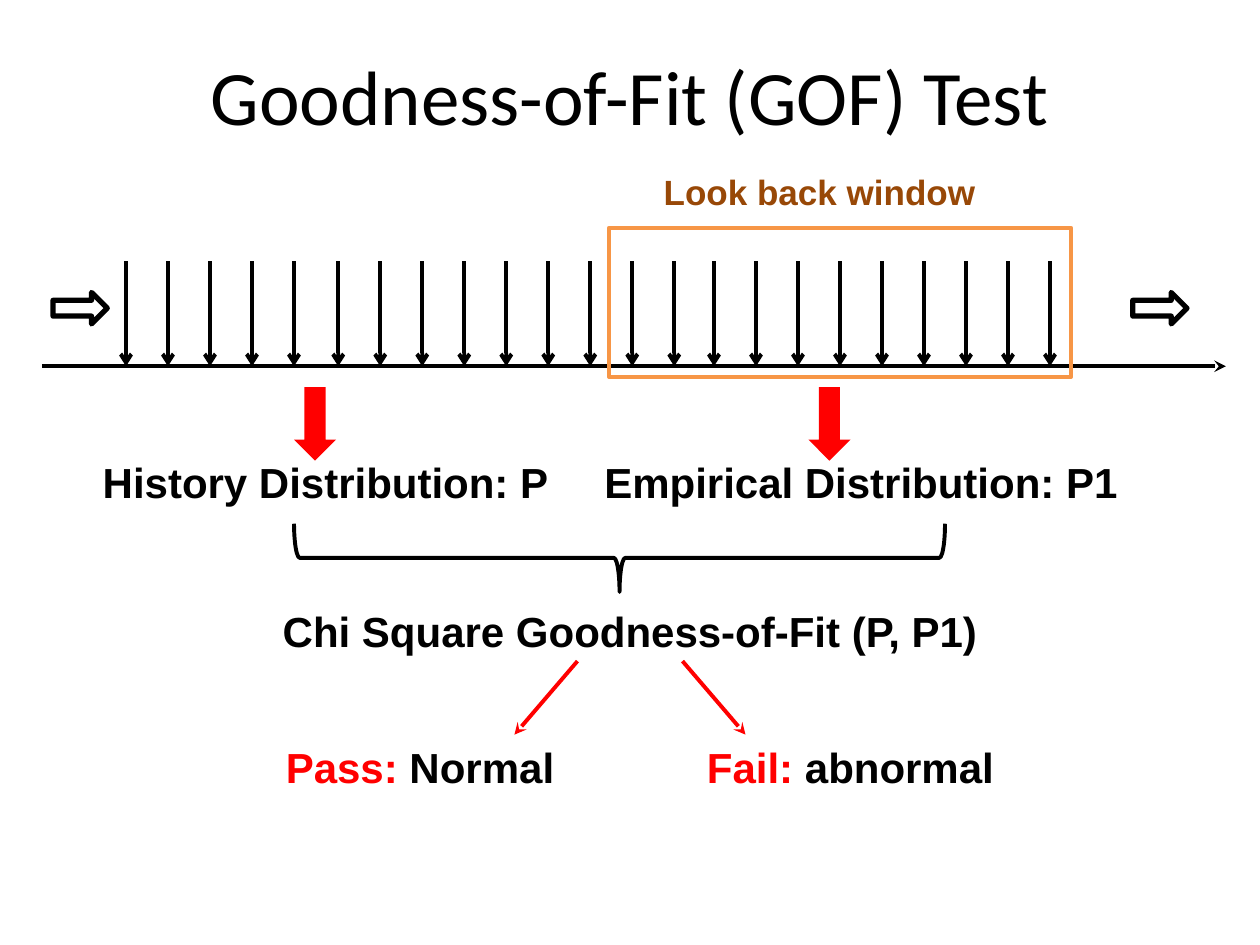
from lxml import etree
from pptx import Presentation
from pptx import util as u
from pptx.dml import color
from pptx.enum import shapes, text
from pptx.oxml import ns

Pt = u.Pt
BLACK, RED, ORANGE, BROWN = "000000", "FF0000", "F79646", "984807"
SHAPE = shapes.MSO_SHAPE
BODY = {"size": Pt(24), "name": "Arial", "bold": True}


def rgb(value):
    return color.RGBColor.from_string(value)


def assign(target, values):
    for name, value in values.items():
        setattr(target, name, value)


def add_text(page, area, spans, font=BODY, align=text.PP_ALIGN.CENTER, wrap=True, spacing=1):
    box = page.shapes.add_textbox(*map(Pt, area))
    assign(box.text_frame, {"word_wrap": wrap, "auto_size": text.MSO_AUTO_SIZE.SHAPE_TO_FIT_TEXT})
    para = box.text_frame.paragraphs[0]
    assign(para, {"alignment": align, "line_spacing": spacing})
    for words, ink in spans:
        span = para.add_run()
        span.text = words
        assign(span.font, font)
        span.font.color.rgb = rgb(ink)
    return box


def add_arrow(page, ends, ink, head):
    arrow = page.shapes.add_connector(shapes.MSO_CONNECTOR.STRAIGHT, *map(Pt, ends))
    arrow.line.width = Pt(2.25)
    arrow.line.color.rgb = rgb(ink)
    etree.SubElement(arrow.line._get_or_add_ln(), ns.qn("a:tailEnd"), type=head)
    etree.SubElement(arrow._element.spPr, ns.qn("a:effectLst"))


def add_figure(page, kind, area, fill=None, line=None, width=0, rotation=0):
    figure = page.shapes.add_shape(kind, *map(Pt, area))
    figure.shadow.inherit = False
    figure.rotation = rotation
    if fill:
        figure.fill.solid()
        figure.fill.fore_color.rgb = rgb(fill)
    else:
        figure.fill.background()
    if line:
        figure.line.width = Pt(width)
        figure.line.color.rgb = rgb(line)
    else:
        figure.line.fill.background()


def add_title(page, area):
    add_text(page, area, [("Goodness-of-Fit (GOF) Test", BLACK)],
             {"size": Pt(44), "name": "Calibri"}, spacing=0.9)


def add_timeline(page, area):
    left, top, width, height = area
    axis = top + height
    for start, count in ((48, 5), (169.3, 9), (384, 9)):
        for step in range(count):
            x = left + start + 24 * step
            add_arrow(page, (x, top, x, axis), BLACK, "arrow")
    add_arrow(page, (left, axis, left + width, axis), BLACK, "stealth")
    for offset in (6.3, 623.3):
        add_figure(page, SHAPE.DOWN_ARROW, (left + offset + 6.5, top + 11.3, 18, 31),
                   line=BLACK, width=3, rotation=270)


def add_window(page, area):
    left, top, width, height = area
    add_figure(page, SHAPE.RECTANGLE, area, line=ORANGE, width=2.5)
    add_text(page, (left + 24.2, top - 36.7, 193.7, 31.5), [("Look back window", BROWN)],
             {**BODY, "size": Pt(20)}, text.PP_ALIGN.LEFT, wrap=False)


def add_distribution(page, area, arrow_x, words):
    left, top, width, height = area
    add_figure(page, SHAPE.DOWN_ARROW, (arrow_x - 12, top, 24, 42), fill=RED)
    add_text(page, (left, top + 36, width, height - 36), [(words, BLACK)])


def add_test(page, area):
    left, top, width, height = area
    span, depth = 372, 39
    add_figure(page, SHAPE.RIGHT_BRACE,
               (354 - depth / 2, top + depth / 2 - span / 2, depth, span),
               line=BLACK, width=2.25, rotation=90)
    add_text(page, (left, top + 43, width, 36), [("Chi Square Goodness-of-Fit (P, P1)", BLACK)])
    middle, bottom = left + width / 2, top + height
    for side in (-1, 1):
        add_arrow(page, (middle + 30 * side, bottom - 42, middle + 66 * side, bottom),
                  RED, "stealth")


def add_outcome(page, area, verdict, meaning):
    add_text(page, area, [(verdict, RED), (" " + meaning, BLACK)])


def main():
    deck = Presentation()
    assign(deck, {"slide_width": Pt(720), "slide_height": Pt(540)})
    page = deck.slides.add_slide(deck.slide_layouts[6])
    add_title(page, (0, 30, 720, 55.5))
    add_timeline(page, (24, 149.3, 676.5, 60))
    add_window(page, (348, 130.3, 264, 85))
    add_distribution(page, (18, 221.3, 336, 72), 180, "History Distribution: P")
    add_distribution(page, (324, 221.3, 336, 72), 474, "Empirical Distribution: P1")
    add_test(page, (132, 299.3, 456, 120.5))
    add_outcome(page, (132, 420, 216, 36), "Pass:", "Normal")
    add_outcome(page, (378, 420, 216, 36), "Fail:", "abnormal")
    deck.save("out.pptx")


if __name__ == "__main__":
    main()
